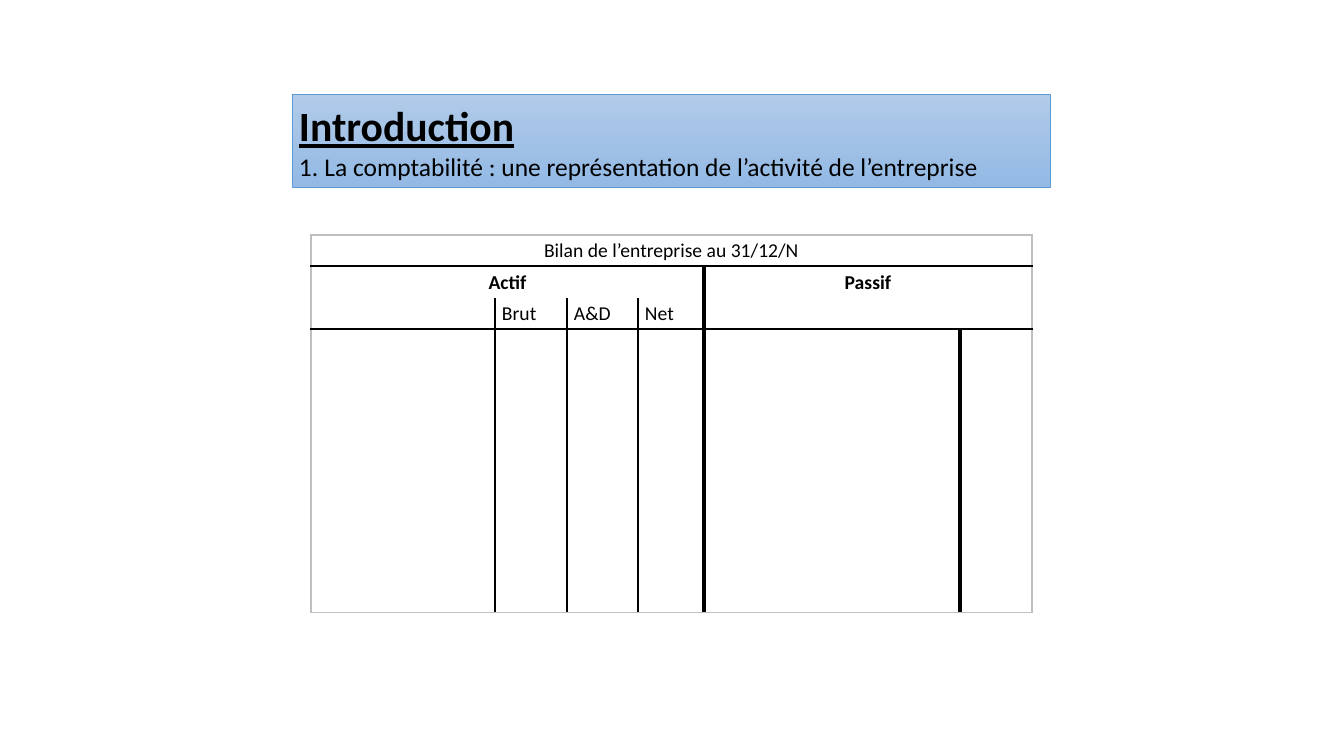
from lxml import etree
from pptx import Presentation
from pptx.dml.color import RGBColor
from pptx.enum.shapes import MSO_SHAPE
from pptx.enum.text import MSO_ANCHOR, PP_ALIGN
from pptx.oxml.ns import qn
from pptx.util import Emu, Pt

RECTANGLE = MSO_SHAPE.RECTANGLE
MIDDLE, TOP = MSO_ANCHOR.MIDDLE, MSO_ANCHOR.TOP
CENTER, LEFT = PP_ALIGN.CENTER, PP_ALIGN.LEFT

HEADING = "Introduction"
SECTION = [
    ("1.", "section"),
    (" ", "gap"),
    ("La comptabilité : une représentation de l’activité de l’entreprise", "section"),
]
LABELS = {
    (0, 0): ("Bilan de l’entreprise au 31/12/N", 6, CENTER, TOP, False),
    (1, 0): ("Actif", 4, CENTER, MIDDLE, True),
    (1, 4): ("Passif", 2, CENTER, MIDDLE, True),
    (2, 1): ("Brut", 1, LEFT, TOP, False),
    (2, 2): ("A&D", 1, LEFT, TOP, False),
    (2, 3): ("Net", 1, LEFT, TOP, False),
}
COLUMNS = [184, 72, 71, 66, 256, 72]
ROWS = [31, 32] * 6
BANNER = (292, 94, 758, 93)
BALANCE_SHEET = (311, 235)

THEME = {
    "font": "Calibri",
    "text": "000000",
    "banner": ["B1CBE9", "93B9E4"],
    "banner_line": "5B9BD5",
    "sizes": {"heading": 29.7, "section": 18.2, "gap": 18.9, "cell": 14},
    "rules": {"outer": ("BFBFBF", 1), "thin": ("000000", 1), "thick": ("000000", 3)},
}
INNER_RULES = [
    {},
    {4: "thick"},
    {1: "thin", 2: "thin", 3: "thin", 4: "thick"},
    {1: "thin", 2: "thin", 3: "thin", 4: "thick", 5: "thick"},
]


def px(length):
    return Emu(round(length * 914400 / 100.8))


def add_run(paragraph, text, size, bold=False, underline=False):
    run = paragraph.add_run()
    run.text = text
    font = run.font
    font.name = THEME["font"]
    font.size = Pt(THEME["sizes"][size])
    font.bold = bold
    font.underline = underline
    font.color.rgb = RGBColor.from_string(THEME["text"])


def set_margins(frame):
    frame.margin_left = frame.margin_right = px(7)
    frame.margin_top, frame.margin_bottom = px(4), px(3)


def vertical_rule(row, boundary):
    if boundary in (0, len(COLUMNS)):
        return "outer"
    return INNER_RULES[min(row, 3)].get(boundary)


def horizontal_rule(boundary):
    if boundary in (0, len(ROWS)):
        return "outer"
    return "thin" if boundary in (1, 3) else None


def set_borders(cell, rules):
    properties = cell._tc.get_or_add_tcPr()
    for position, (side, rule) in enumerate(zip("LRTB", rules)):
        line = etree.Element(qn(f"a:ln{side}"))
        if rule:
            color, weight = THEME["rules"][rule]
            line.set("w", str(Pt(weight)))
            fill = etree.SubElement(line, qn("a:solidFill"))
            etree.SubElement(fill, qn("a:srgbClr"), val=color)
        else:
            etree.SubElement(line, qn("a:noFill"))
        properties.insert(position, line)


def add_banner(slide):
    banner = slide.shapes.add_shape(RECTANGLE, *map(px, BANNER))
    banner.shadow.inherit = False
    banner.fill.gradient()
    banner.fill.gradient_angle = 270
    for stop, color in zip(banner.fill.gradient_stops, THEME["banner"]):
        stop.color.rgb = RGBColor.from_string(color)
    banner.line.color.rgb = RGBColor.from_string(THEME["banner_line"])
    banner.line.width = Pt(0.5)
    frame = banner.text_frame
    frame.word_wrap = True
    frame.vertical_anchor = MIDDLE
    set_margins(frame)
    title = frame.paragraphs[0]
    title.alignment = LEFT
    add_run(title, HEADING, "heading", bold=True, underline=True)
    title.add_line_break()
    for text, size in SECTION:
        add_run(title, text, size)


def add_balance_sheet(slide):
    place = (*BALANCE_SHEET, sum(COLUMNS), sum(ROWS))
    table = slide.shapes.add_table(len(ROWS), len(COLUMNS), *map(px, place)).table
    table.first_row = table.horz_banding = False
    for column, width in zip(table.columns, COLUMNS):
        column.width = px(width)
    for row, height in zip(table.rows, ROWS):
        row.height = px(height)
    for r in range(len(ROWS)):
        for c in range(len(COLUMNS)):
            cell = table.cell(r, c)
            text, span, alignment, anchor, bold = LABELS.get((r, c), ("", 1, LEFT, TOP, False))
            if span > 1:
                cell.merge(table.cell(r, c + span - 1))
            cell.fill.background()
            cell.vertical_anchor = anchor
            set_margins(cell)
            set_borders(cell, [
                vertical_rule(r, c), vertical_rule(r, c + span),
                horizontal_rule(r), horizontal_rule(r + 1),
            ])
            label = cell.text_frame.paragraphs[0]
            label.alignment = alignment
            if text:
                add_run(label, text, "cell", bold)
            else:
                size = str(THEME["sizes"]["cell"] * 100)
                ending = etree.SubElement(label._p, qn("a:endParaRPr"), sz=size)
                etree.SubElement(ending, qn("a:latin"), typeface=THEME["font"])


def main():
    deck = Presentation()
    deck.slide_width, deck.slide_height = px(1344), px(756)
    slide = deck.slides.add_slide(deck.slide_layouts[6])
    add_balance_sheet(slide)
    add_banner(slide)
    deck.save("out.pptx")


if __name__ == "__main__":
    main()
